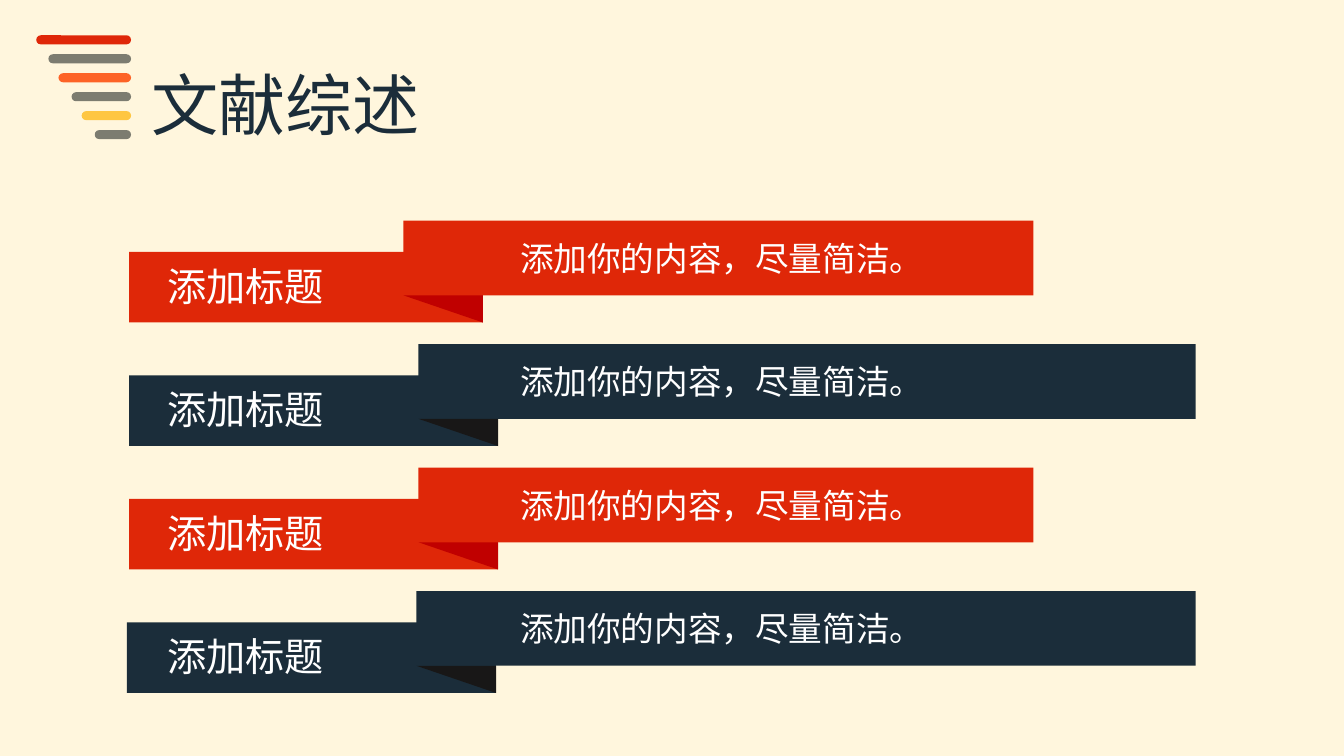
from lxml import etree
from pptx import Presentation
from pptx import util as u
from pptx.dml import color
from pptx.enum import shapes, text
from pptx.oxml import ns

FONT = "Noto Sans CJK SC"
HUES = {
    "cream": "FFF6DD", "navy": "1B2D3A", "red": "DF2708", "orange": "FD6326",
    "yellow": "FEC642", "gray": "7C7C70", "wine": "C00000", "black": "181717",
    "white": "FFFFFF",
}
PITCH = 1.225   # height of one ribbon row
TOP = 2.19      # top of the first ribbon
FOLD = 0.79     # overlap of tab and band
TAB = 0.7       # height of a tab
BAND = 0.74     # height of a band
DROP = 0.31     # step from band top to tab top

# Icon bars: left edge, hue
BARS = [(0.36, "red"), (0.48, "gray"), (0.58, "orange"),
        (0.71, "gray"), (0.81, "yellow"), (0.94, "gray")]
# Ribbons: tab left, fold left, band right, hue, fold hue
RIBBONS = [
    (1.28, 4.0, 10.25, "red", "wine"),
    (1.28, 4.15, 11.86, "navy", "black"),
    (1.28, 4.15, 10.25, "red", "wine"),
    (1.26, 4.13, 11.86, "navy", "black"),
]


def rgb(hue):
    return color.RGBColor.from_string(HUES[hue])


def paint(shape, hue):
    shape.shadow.inherit = False
    shape.fill.solid()
    shape.fill.fore_color.rgb = rgb(hue)
    shape.line.fill.background()


def block(parent, kind, box, hue):
    shape = parent.add_shape(kind, *map(u.Inches, box))
    paint(shape, hue)
    return shape


def label(slide, words, box, size, hue):
    frame = slide.shapes.add_textbox(*map(u.Inches, box)).text_frame
    frame.word_wrap = False
    frame.auto_size = text.MSO_AUTO_SIZE.SHAPE_TO_FIT_TEXT
    frame.text = words
    run = frame.paragraphs[0].runs[0]
    run.font.size = u.Pt(size)
    run.font.name = FONT
    run.font.color.rgb = rgb(hue)
    # East Asian typeface
    face = etree.SubElement(run.font._element, ns.qn("a:ea"))
    face.set("typeface", FONT)


def icon(slide):
    group = slide.shapes.add_group_shape().shapes
    for row, (left, hue) in enumerate(BARS):
        box = (left, 0.35 + 0.188 * row, 1.3 - left, 0.09)
        bar = block(group, shapes.MSO_SHAPE.ROUNDED_RECTANGLE, box, hue)
        bar.adjustments[0] = 0.5


def ribbon(slide, top, left, fold, right, hue, shade):
    group = slide.shapes.add_group_shape().shapes
    rect = shapes.MSO_SHAPE.RECTANGLE
    end, base, foot = fold + FOLD, top + BAND, top + DROP + TAB
    block(group, rect, (left, top + DROP, end - left, TAB), hue)
    block(group, rect, (fold, top, right - fold, BAND), hue)
    # Folded corner below the band
    pen = group.build_freeform(u.Inches(end), u.Inches(base))
    pen.add_line_segments([(u.Inches(x), u.Inches(y))
                           for x, y in ((fold, base), (end, foot))])
    paint(pen.convert_to_shape(), shade)


def main():
    deck = Presentation()
    deck.slide_width, deck.slide_height = u.Inches(13.33), u.Inches(7.5)
    slide = deck.slides.add_slide(deck.slide_layouts[6])
    slide.background.fill.solid()
    slide.background.fill.fore_color.rgb = rgb("cream")

    # Heading
    label(slide, "文献综述", (1.4, 0.58, 2.89, 0.91), 48, "navy")
    icon(slide)

    # Ribbons with their texts
    for row, parts in enumerate(RIBBONS):
        top = TOP + PITCH * row
        ribbon(slide, top, *parts)
        label(slide, "添加标题", (1.56, top + 0.36, 1.77, 0.57), 28, "white")
        label(slide, "添加你的内容，尽量简洁。",
              (5.06, top + 0.12, 4.24, 0.5), 24, "white")

    deck.save("out.pptx")


if __name__ == "__main__":
    main()
